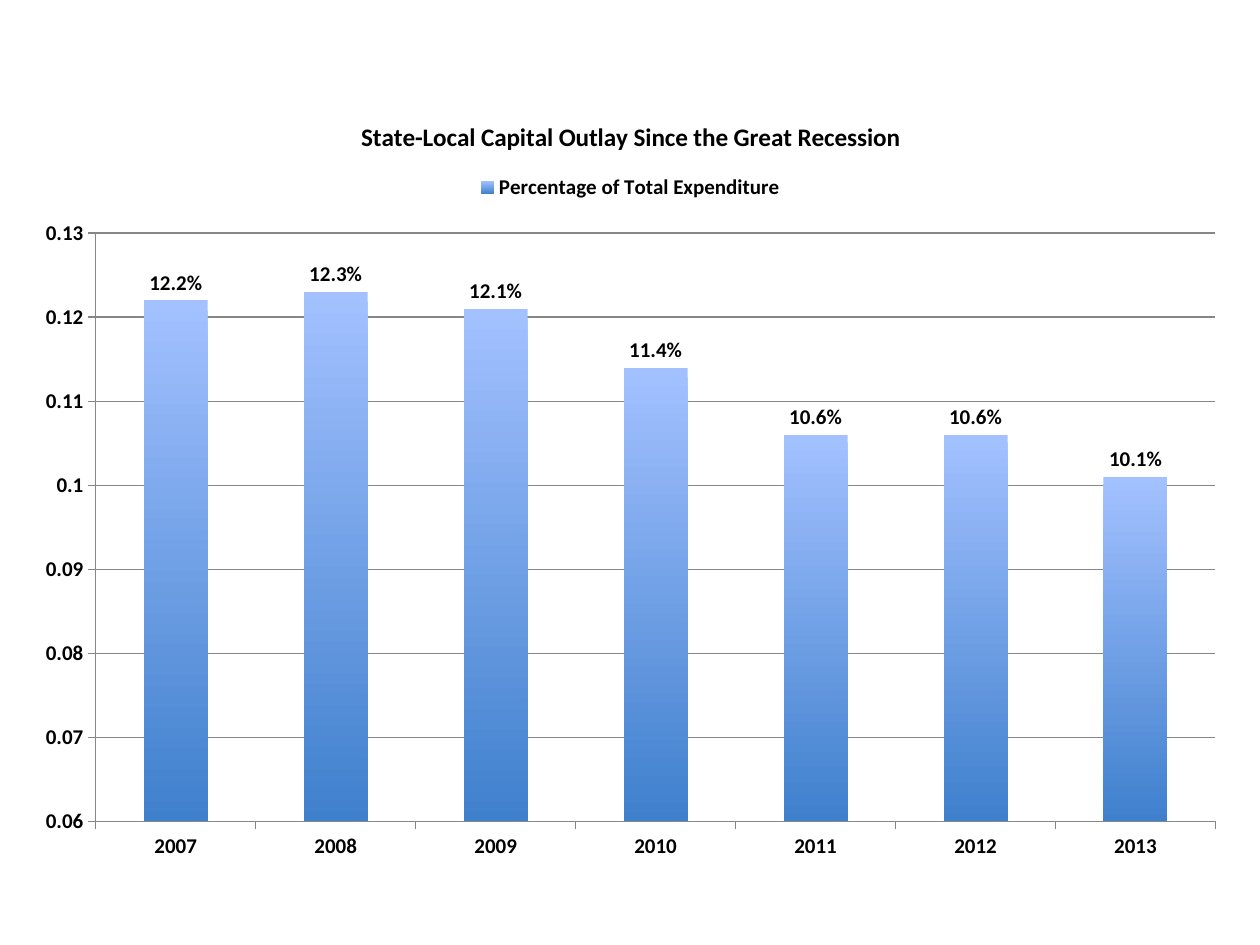
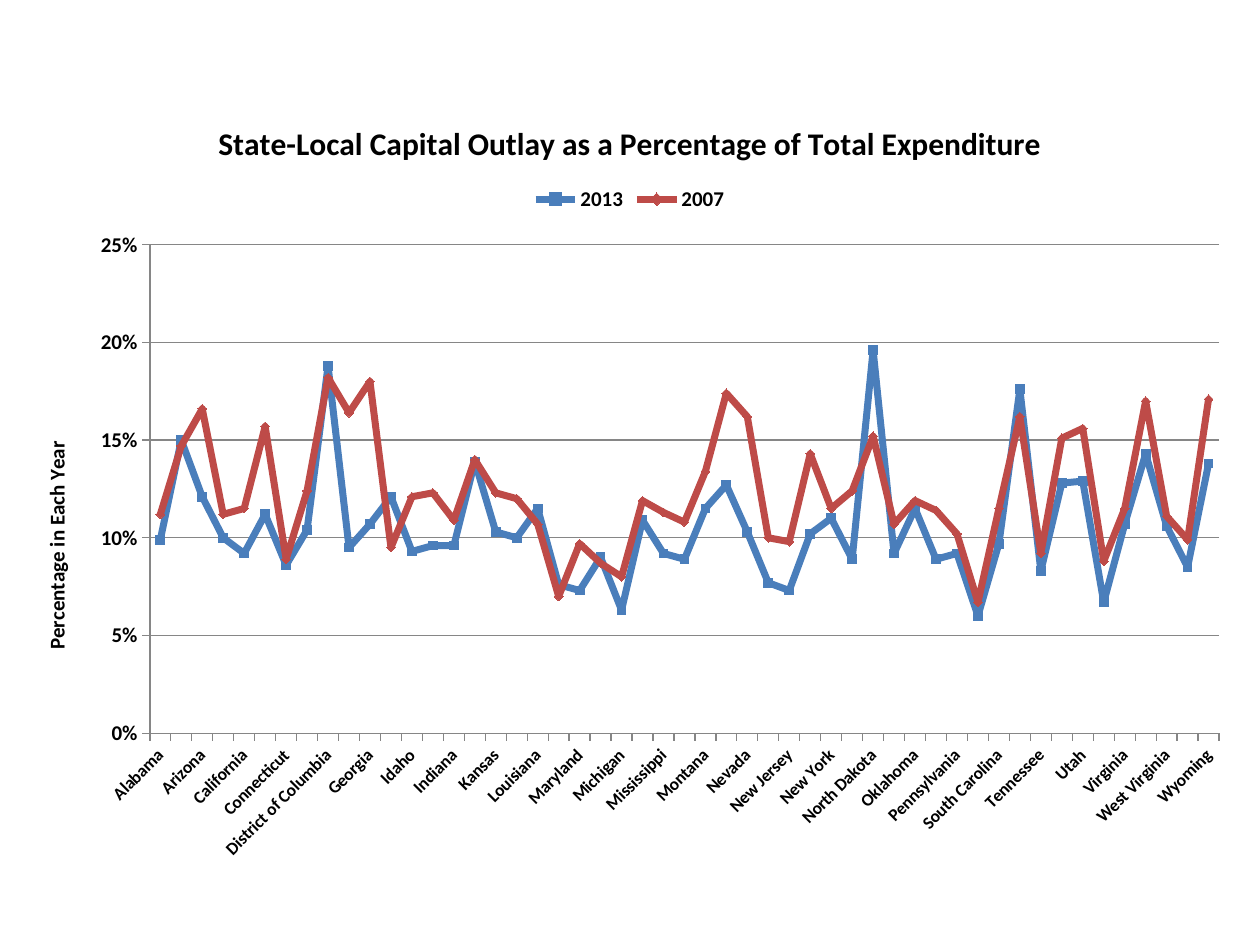
from pptx import Presentation
from pptx.chart.data import CategoryChartData
from pptx.dml.color import RGBColor
from pptx.enum import chart as ch
from pptx.util import Inches, Pt

FONT = "Calibri"
BLACK, GREY = "000000", "868686"
BAR_TOP, BAR_BOTTOM = "A3C1FF", "3F80CD"
BLUE, RED = "4A7EBB", "BE4B48"

YEARS = ["2007", "2008", "2009", "2010", "2011", "2012", "2013"]
OUTLAY = [0.122, 0.123, 0.121, 0.114, 0.106, 0.106, 0.101]

STATES = [
    ("Alabama", 0.099, 0.112), ("Alaska", 0.15, 0.147),
    ("Arizona", 0.121, 0.166), ("Arkansas", 0.1, 0.112),
    ("California", 0.092, 0.115), ("Colorado", 0.112, 0.157),
    ("Connecticut", 0.086, 0.089), ("Delaware", 0.104, 0.124),
    ("District of Columbia", 0.188, 0.182), ("Florida", 0.095, 0.164),
    ("Georgia", 0.107, 0.18), ("Hawaii", 0.121, 0.095),
    ("Idaho", 0.093, 0.121), ("Illinois", 0.096, 0.123),
    ("Indiana", 0.096, 0.109), ("Iowa", 0.139, 0.14),
    ("Kansas", 0.103, 0.123), ("Kentucky", 0.1, 0.12),
    ("Louisiana", 0.115, 0.107), ("Maine", 0.076, 0.07),
    ("Maryland", 0.073, 0.097), ("Massachusetts", 0.09, 0.087),
    ("Michigan", 0.063, 0.08), ("Minnesota", 0.109, 0.119),
    ("Mississippi", 0.092, 0.113), ("Missouri", 0.089, 0.108),
    ("Montana", 0.115, 0.134), ("Nebraska", 0.127, 0.174),
    ("Nevada", 0.103, 0.162), ("New Hampshire", 0.077, 0.1),
    ("New Jersey", 0.073, 0.098), ("New Mexico", 0.102, 0.143),
    ("New York", 0.11, 0.115), ("North Carolina", 0.089, 0.124),
    ("North Dakota", 0.196, 0.152), ("Ohio", 0.092, 0.107),
    ("Oklahoma", 0.115, 0.119), ("Oregon", 0.089, 0.114),
    ("Pennsylvania", 0.092, 0.102), ("Rhode Island", 0.06, 0.067),
    ("South Carolina", 0.097, 0.115), ("South Dakota", 0.176, 0.162),
    ("Tennessee", 0.083, 0.092), ("Texas", 0.128, 0.151),
    ("Utah", 0.129, 0.156), ("Vermont", 0.067, 0.088),
    ("Virginia", 0.107, 0.115), ("Washington", 0.143, 0.17),
    ("West Virginia", 0.106, 0.111), ("Wisconsin", 0.085, 0.099),
    ("Wyoming", 0.138, 0.171),
]


def rgb(color):
    return RGBColor.from_string(color)


def style_font(font, size):
    font.name = FONT
    font.size = Pt(size)
    font.bold = True
    font.color.rgb = rgb(BLACK)


def set_text(tf, text, size):
    tf.text = text
    style_font(tf.paragraphs[0].runs[0].font, size)


def style_line(line, color, width):
    line.color.rgb = rgb(color)
    line.width = Pt(width)


def rotate_text(axis, part, degrees):
    body = axis._element.xpath(f"c:{part}//a:bodyPr")[0]
    body.set("rot", str(degrees * 60000))
    body.set("vert", "horz")


def style_axis(axis, size):
    axis.major_tick_mark = ch.XL_TICK_MARK.OUTSIDE
    axis.minor_tick_mark = ch.XL_TICK_MARK.NONE
    style_font(axis.tick_labels.font, size)
    style_line(axis.format.line, GREY, 0.75)


def style_value_axis(axis, low, high, step, number_format):
    style_axis(axis, 12)
    axis.minimum_scale, axis.maximum_scale = low, high
    axis.major_unit = step
    axis.has_major_gridlines = True
    style_line(axis.major_gridlines.format.line, GREY, 0.75)
    axis.tick_labels.number_format = number_format
    axis.tick_labels.number_format_is_linked = False


def add_chart(prs, kind, left, width, title, title_size, categories, series):
    s = prs.slides.add_slide(prs.slide_layouts[6])
    data = CategoryChartData()
    data.categories = categories
    for name, values in series:
        data.add_series(name, values)
    chart = s.shapes.add_chart(kind, Inches(left), Inches(0.74),
                               Inches(width), Inches(6.2), data).chart
    style_font(chart.font, 12)
    chart.has_title = True
    set_text(chart.chart_title.text_frame, title, title_size)
    chart.has_legend = True
    chart.legend.position = ch.XL_LEGEND_POSITION.TOP
    chart.legend.include_in_layout = False
    style_font(chart.legend.font, 12)
    chart.plots[0].vary_by_categories = False
    return chart


def fill_bars(bars):
    bars.invert_if_negative = False
    fill = bars.format.fill
    fill.gradient()
    fill.gradient_angle = 270
    for stop, color in zip(fill.gradient_stops, (BAR_TOP, BAR_BOTTOM)):
        stop.color.rgb = rgb(color)


def label_bars(plot):
    plot.has_data_labels = True
    labels = plot.data_labels
    labels.show_value = True
    labels.number_format = "0.0%"
    labels.number_format_is_linked = False
    labels.position = ch.XL_LABEL_POSITION.OUTSIDE_END
    style_font(labels.font, 12)


def style_state_line(series, color, marker):
    series.smooth = False
    style_line(series.format.line, color, 4)
    series.marker.style = marker
    series.marker.size = 5
    series.marker.format.fill.solid()
    series.marker.format.fill.fore_color.rgb = rgb(color)
    style_line(series.marker.format.line, color, 0.75)


def add_recession_slide(prs):
    chart = add_chart(prs, ch.XL_CHART_TYPE.COLUMN_CLUSTERED, 0.17, 9.67,
                      "State-Local Capital Outlay Since the Great Recession",
                      14.4, YEARS, [("Percentage of Total Expenditure", OUTLAY)])
    style_axis(chart.category_axis, 12)
    style_value_axis(chart.value_axis, 0.06, 0.13, 0.01, "General")
    plot = chart.plots[0]
    plot.gap_width = 150
    fill_bars(plot.series[0])
    label_bars(plot)


def add_states_slide(prs):
    states, outlay_2013, outlay_2007 = zip(*STATES)
    chart = add_chart(prs, ch.XL_CHART_TYPE.LINE_MARKERS, 0.13, 9.74,
                      "State-Local Capital Outlay as a Percentage of Total Expenditure",
                      18, states, [("2013", outlay_2013), ("2007", outlay_2007)])
    style_axis(chart.category_axis, 10)
    rotate_text(chart.category_axis, "txPr", -45)
    axis = chart.value_axis
    style_value_axis(axis, 0, 0.25, 0.05, "0%")
    set_text(axis.axis_title.text_frame, "Percentage in Each Year", 12)
    rotate_text(axis, "title", -90)
    markers = (ch.XL_MARKER_STYLE.SQUARE, ch.XL_MARKER_STYLE.DIAMOND)
    for series, color, marker in zip(chart.plots[0].series, (BLUE, RED), markers):
        style_state_line(series, color, marker)


def main():
    prs = Presentation()
    prs.slide_width, prs.slide_height = Inches(10), Inches(7.5)
    add_recession_slide(prs)
    add_states_slide(prs)
    prs.save("out.pptx")


if __name__ == "__main__":
    main()
